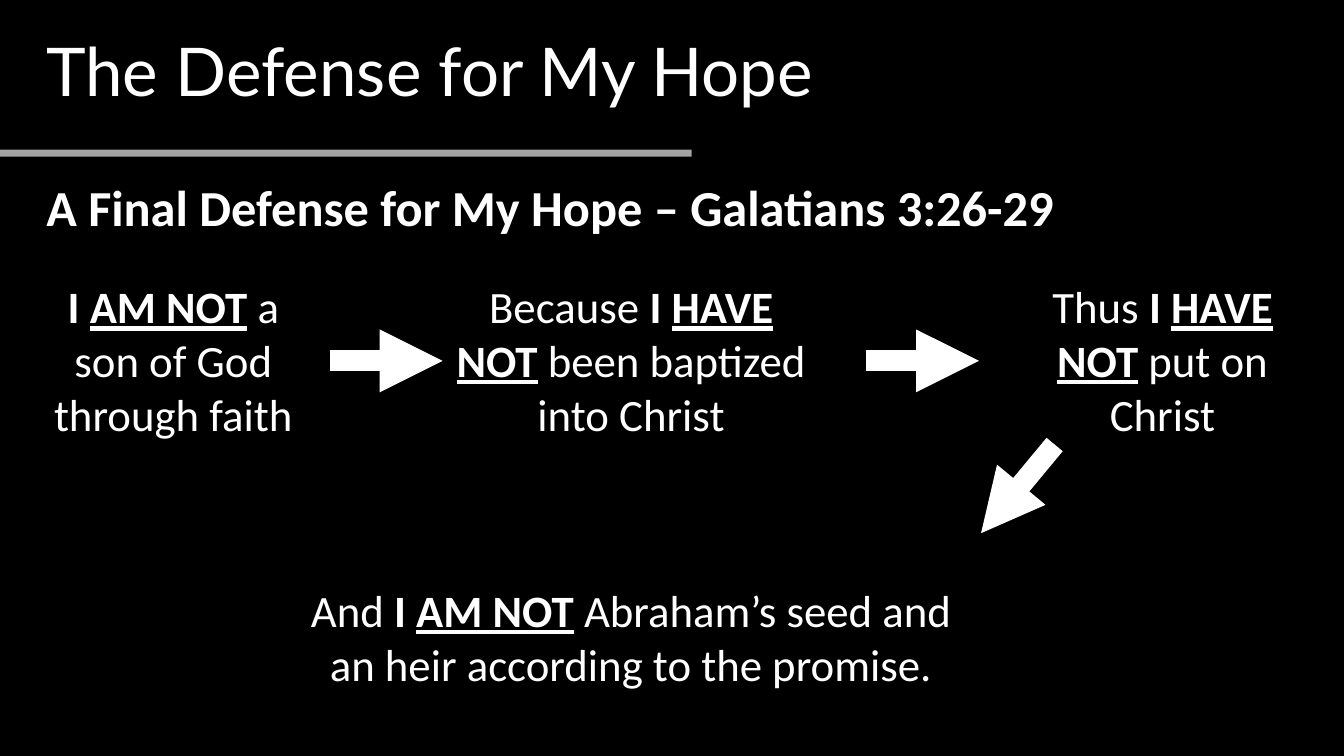
from pptx import Presentation
from pptx.dml.color import RGBColor
from pptx.enum import shapes, text
from pptx.oxml import xmlchemy as x
from pptx.util import Inches, Pt

WHITE = "FFFFFF"
TITLE = "The Defense for My Hope"
HEADING = "A Final Defense for My Hope – Galatians 3:26-29"
STATEMENTS = [
    ((0.36, 2.72, 2.72, 1.72), "", "AM NOT", "a son of God through faith"),
    ((4.39, 2.72, 3.74, 1.72), "Because ", "HAVE NOT", "been baptized into Christ"),
    ((10.09, 2.72, 2.88, 1.72), "Thus ", "HAVE NOT", "put on Christ"),
    ((2.96, 5.73, 6.6, 1.18), "And ", "AM NOT",
     "Abraham’s seed and an heir according to the promise."),
]
ROW_MIDDLE = 2.72 + 1.72 / 2
RULE = (-0.22, 1.52, 6.86, 1.52)
ARROWS = [
    (3.27, ROW_MIDDLE, 4.39, ROW_MIDDLE),
    (8.59, ROW_MIDDLE, 9.71, ROW_MIDDLE),
    (10.46, 4.41, 9.73, 5.29),
]


def rgb(value):
    return RGBColor.from_string(value)


def place(sp, box):
    sp.left, sp.top, sp.width, sp.height = map(Inches, box)


def add_run(p, words, size, font="Calibri", bold=False, underline=False):
    r = p.add_run()
    r.text = words
    r.font.size, r.font.name = Pt(size), font
    r.font.bold, r.font.underline = bold, underline
    r.font.color.rgb = rgb(WHITE)


def child(parent, tag, **attributes):
    element = x.OxmlElement(tag)
    for name, value in attributes.items():
        element.set(name, value)
    parent.append(element)
    return element


def add_line(s, ends, width):
    line = s.shapes.add_connector(shapes.MSO_CONNECTOR.STRAIGHT, *map(Inches, ends))
    line.line.color.rgb = rgb(WHITE)
    line.line.width = Pt(width)
    child(line._element.spPr, "a:effectLst")
    return line


prs = Presentation()
prs.slide_width, prs.slide_height = Inches(13.33), Inches(7.5)
s = prs.slides.add_slide(prs.slide_layouts[1])
s.background.fill.solid()
s.background.fill.fore_color.rgb = rgb("000000")

title, body = s.placeholders
place(title, (0.36, 0.02, 12.6, 1.45))
place(body, (0.36, 1.77, 12.6, 5.34))
for sp, words, size, font, bold in [
    (title, TITLE, 48, "Lato", False),
    (body, HEADING, 36, "Calibri", True),
]:
    tf = sp.text_frame
    tf.auto_size = text.MSO_AUTO_SIZE.NONE
    p = tf.paragraphs[0]
    p.alignment = text.PP_ALIGN.LEFT
    p.line_spacing = 0.9
    add_run(p, words, size, font, bold)
title.text_frame.vertical_anchor = text.MSO_ANCHOR.MIDDLE
p.space_before = Pt(10)
pPr = p._p.get_or_add_pPr()
pPr.set("marL", "0")
pPr.set("indent", "0")
child(pPr, "a:buNone")

rule = add_line(s, RULE, 5)
child(rule.line.fill._xPr.find(".//{*}srgbClr"), "a:alpha", val="63000")

boxes = []
for box, opening, claim, ending in STATEMENTS:
    sp = s.shapes.add_textbox(*map(Inches, box))
    tf = sp.text_frame
    tf.word_wrap = True
    tf.auto_size = text.MSO_AUTO_SIZE.SHAPE_TO_FIT_TEXT
    p = tf.paragraphs[0]
    p.alignment = text.PP_ALIGN.CENTER
    if opening:
        add_run(p, opening, 32)
    add_run(p, "I ", 32, bold=True)
    add_run(p, claim, 32, bold=True, underline=True)
    add_run(p, " ", 32, bold=True)
    add_run(p, ending, 32)
    boxes.append(sp)

arrows = [add_line(s, ends, 15) for ends in ARROWS]
for arrow in arrows:
    child(arrow.line._get_or_add_ln(), "a:tailEnd", type="triangle")
arrows[0].end_connect(boxes[1], 1)

prs.save("out.pptx")
